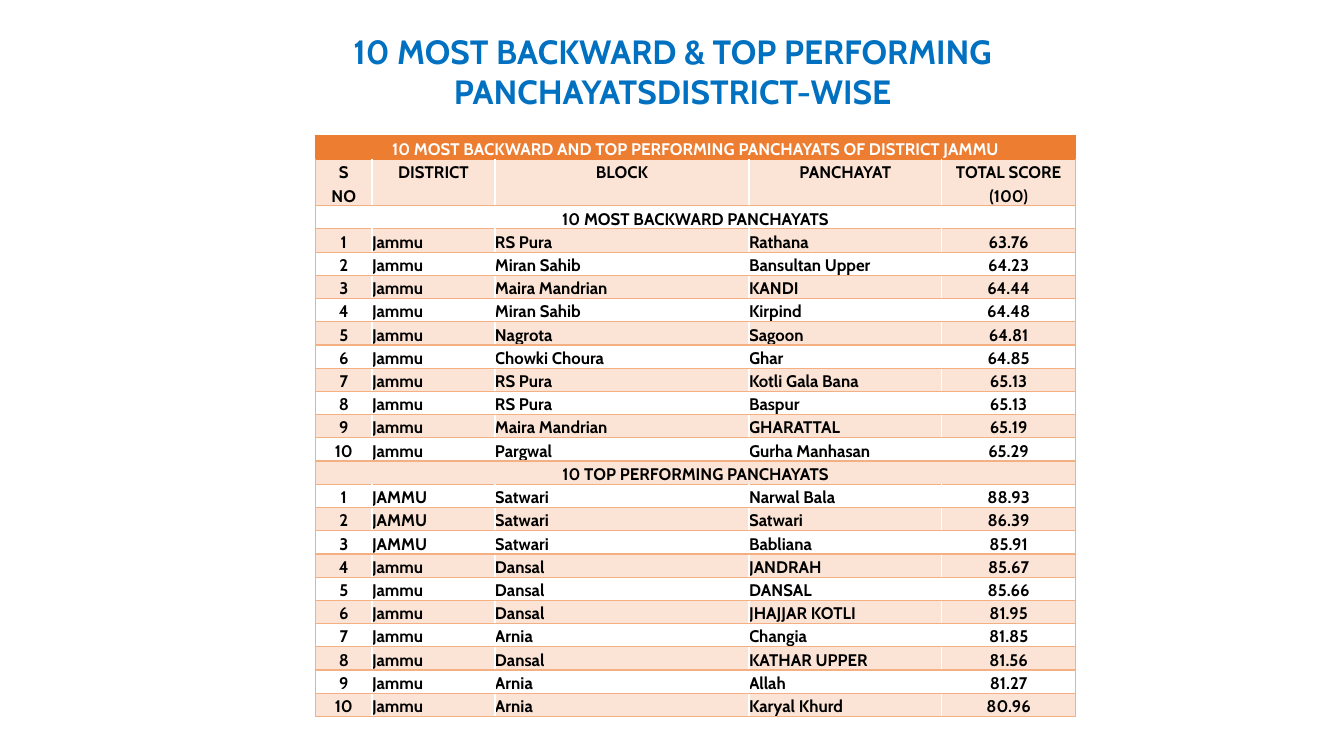
from dataclasses import dataclass

from lxml import etree
from pptx import Presentation
from pptx.dml.color import RGBColor
from pptx.enum.text import MSO_ANCHOR, MSO_AUTO_SIZE, PP_ALIGN
from pptx.oxml.ns import qn
from pptx.util import Inches, Pt

CENTER, LEFT = PP_ALIGN.CENTER, PP_ALIGN.LEFT
MIDDLE = MSO_ANCHOR.MIDDLE
FIT_SHAPE = MSO_AUTO_SIZE.SHAPE_TO_FIT_TEXT
TITLE_ONLY = 5


@dataclass(frozen=True)
class Theme:
    font: str = "Cabin"
    title: str = "0070C0"
    accent: str = "ED7D31"
    rule: str = "F4B083"
    band: str = "FBE4D5"
    white: str = "FFFFFF"
    black: str = "000000"
    title_size: int = 24
    table_size: int = 12
    rule_width: int = 1


COLUMNS = (0.56, 1.22, 2.52, 1.91, 1.33)
ALIGNMENTS = (CENTER, LEFT, LEFT, LEFT, CENTER)
ROW_HEIGHT, HEADER_HEIGHT = 0.21, 0.44

TABLE_TITLE = "10 MOST BACKWARD AND TOP PERFORMING PANCHAYATS OF DISTRICT JAMMU"
HEADER = ("S\nNO", "DISTRICT", "BLOCK", "PANCHAYAT", "TOTAL SCORE\n(100)")
SECTIONS = {
    "10 MOST BACKWARD PANCHAYATS": [
        ("Jammu", "RS Pura", "Rathana", "63.76"),
        ("Jammu", "Miran Sahib", "Bansultan Upper", "64.23"),
        ("Jammu", "Maira Mandrian", "KANDI", "64.44"),
        ("Jammu", "Miran Sahib", "Kirpind", "64.48"),
        ("Jammu", "Nagrota", "Sagoon", "64.81"),
        ("Jammu", "Chowki Choura", "Ghar", "64.85"),
        ("Jammu", "RS Pura", "Kotli Gala Bana", "65.13"),
        ("Jammu", "RS Pura", "Baspur", "65.13"),
        ("Jammu", "Maira Mandrian", "GHARATTAL", "65.19"),
        ("Jammu", "Pargwal", "Gurha Manhasan", "65.29"),
    ],
    "10 TOP PERFORMING PANCHAYATS": [
        ("JAMMU", "Satwari", "Narwal Bala", "88.93"),
        ("JAMMU", "Satwari", "Satwari", "86.39"),
        ("JAMMU", "Satwari", "Babliana", "85.91"),
        ("Jammu", "Dansal", "JANDRAH", "85.67"),
        ("Jammu", "Dansal", "DANSAL", "85.66"),
        ("Jammu", "Dansal", "JHAJJAR KOTLI", "81.95"),
        ("Jammu", "Arnia", "Changia", "81.85"),
        ("Jammu", "Dansal", "KATHAR UPPER", "81.56"),
        ("Jammu", "Arnia", "Allah", "81.27"),
        ("Jammu", "Arnia", "Karyal Khurd", "80.96"),
    ],
}


class SlideBuilder:
    def __init__(self, s, theme):
        self.s = s
        self.theme = theme

    def text(self, tf, text, size, color, align, spacing):
        for i, line in enumerate(text.split("\n")):
            p = tf.paragraphs[0] if i == 0 else tf.add_paragraph()
            p.alignment = align
            p.line_spacing = spacing
            r = p.add_run()
            r.text = line
            r.font.name = self.theme.font
            r.font.size = Pt(size)
            r.font.bold = True
            r.font.color.rgb = RGBColor.from_string(color)

    def title(self, text, left, top, width, height):
        sp = self.s.shapes.title
        sp.left, sp.top = Inches(left), Inches(top)
        sp.width, sp.height = Inches(width), Inches(height)
        tf = sp.text_frame
        tf.word_wrap = True
        tf.auto_size = FIT_SHAPE
        tf.vertical_anchor = MIDDLE
        tf.margin_left = tf.margin_right = Inches(0.05)
        tf.margin_top = tf.margin_bottom = Inches(0.05)
        self.text(tf, text, self.theme.title_size, self.theme.title, CENTER, 1.0)

    def borders(self, cell, colors):
        tc_pr = cell._tc.get_or_add_tcPr()
        for side, color in colors.items():
            ln = etree.SubElement(tc_pr, qn(f"a:ln{side}"), w=str(Pt(self.theme.rule_width)))
            fill = etree.SubElement(ln, qn("a:solidFill"))
            etree.SubElement(fill, qn("a:srgbClr"), val=color)

    def cell(self, cell, text, align, fill, color, edges):
        cell.margin_left = cell.margin_right = 0
        cell.margin_top = cell.margin_bottom = 0
        self.borders(cell, edges)
        cell.fill.solid()
        cell.fill.fore_color.rgb = RGBColor.from_string(fill)
        if text:
            self.text(cell.text_frame, text, self.theme.table_size, color, align, 1.15)

    def table(self, rows, left, top):
        t = self.theme
        heights = [HEADER_HEIGHT if row == HEADER else ROW_HEIGHT for row in rows]
        tbl = self.s.shapes.add_table(
            len(rows), len(COLUMNS), Inches(left), Inches(top),
            Inches(sum(COLUMNS)), Inches(sum(heights))).table
        tbl.horz_banding = False
        for column, width in zip(tbl.columns, COLUMNS):
            column.width = Inches(width)
        last = len(COLUMNS) - 1
        for i, (row, height) in enumerate(zip(rows, heights)):
            tbl.rows[i].height = Inches(height)
            spanned = len(row) == 1
            if spanned:
                tbl.cell(i, 0).merge(tbl.cell(i, last))
            fill = t.accent if i == 0 else t.band if i % 2 else t.white
            color = t.white if i == 0 else t.black
            rule = t.accent if i == 0 else t.rule
            inner = rule if spanned else t.white
            for j in range(len(COLUMNS)):
                text = row[j] if j < len(row) else ""
                align = CENTER if spanned or row == HEADER else ALIGNMENTS[j]
                edges = {
                    "L": rule if j == 0 else inner,
                    "R": rule if j == last else inner,
                    "T": t.accent if i <= 1 else t.rule,
                    "B": rule,
                }
                self.cell(tbl.cell(i, j), text, align, fill, color, edges)


def main():
    prs = Presentation()
    prs.slide_width, prs.slide_height = Inches(13.33), Inches(7.5)
    s = prs.slides.add_slide(prs.slide_layouts[TITLE_ONLY])
    builder = SlideBuilder(s, Theme())
    builder.title("10 MOST BACKWARD & TOP PERFORMING PANCHAYATSDISTRICT-WISE",
                  2.22, 0.25, 8.9, 0.91)
    rows = [(TABLE_TITLE,), HEADER]
    for label, panchayats in SECTIONS.items():
        rows.append((label,))
        rows += [(str(n), *entry) for n, entry in enumerate(panchayats, 1)]
    builder.table(rows, 3.13, 1.35)
    prs.save("out.pptx")


if __name__ == "__main__":
    main()
